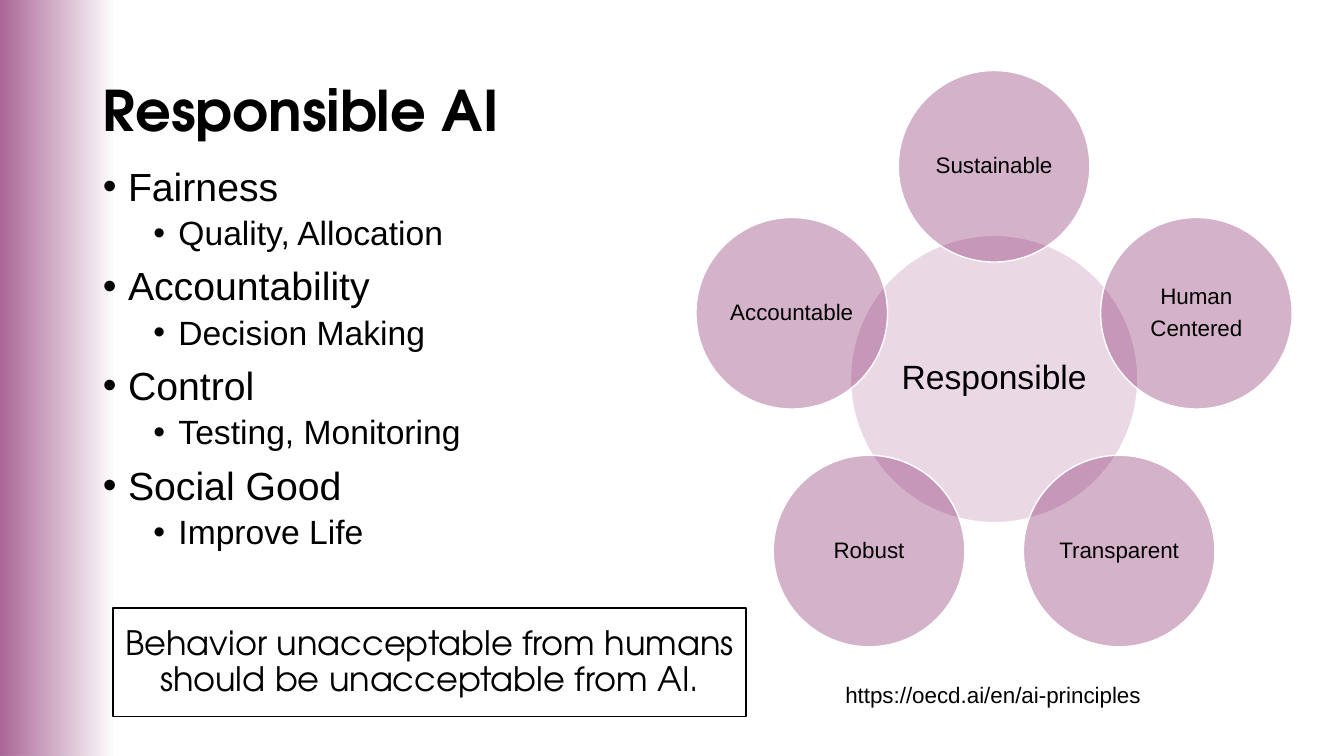
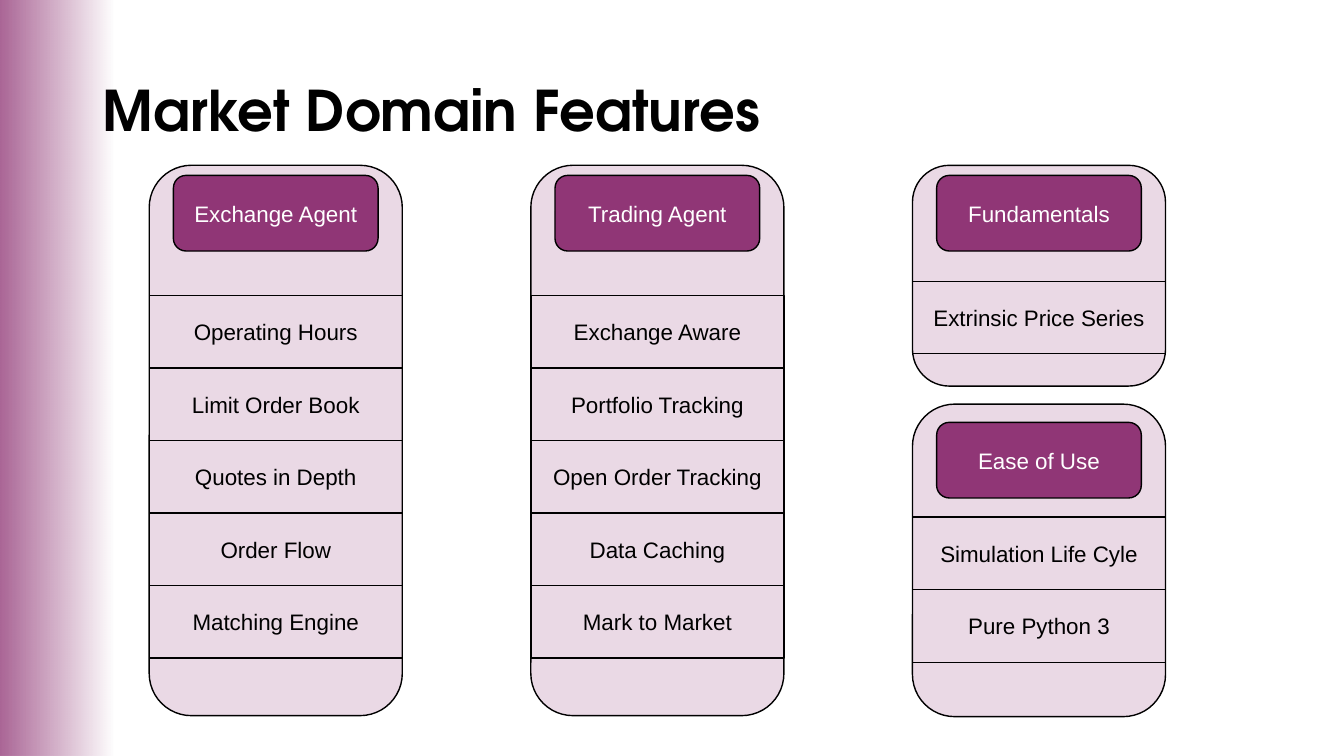
from math import cos, radians, sin

from lxml.etree import SubElement
from pptx import Presentation
from pptx.dml.color import RGBColor
from pptx.enum.shapes import MSO_SHAPE
from pptx.enum.text import MSO_ANCHOR, MSO_AUTO_SIZE, PP_ALIGN
from pptx.oxml.ns import qn
from pptx.util import Inches, Pt

PLUM = RGBColor(0x73, 0x00, 0x51)
BLACK = RGBColor(0x00, 0x00, 0x00)
WHITE = RGBColor(0xFF, 0xFF, 0xFF)
DISPLAY_FONT = "TeX Gyre Adventor"
TEXT_FONT = "Arial"
LINE_SPACING = 0.9
SLIDE_WIDTH, SLIDE_HEIGHT = 13.33, 7.5
BAND_WIDTH = 1.12
TITLE_BOX = (0.92, 0.4, 11.5, 1.45)

PRINCIPLES = [
    ("Fairness", "Quality, Allocation"),
    ("Accountability", "Decision Making"),
    ("Control", "Testing, Monitoring"),
    ("Social Good", "Improve Life"),
]
PETALS = [["Sustainable"], ["Human", "Centered"], ["Transparent"], ["Robust"], ["Accountable"]]

PANEL_WIDTH = 2.51
HEADER_WIDTH, HEADER_HEIGHT = 2.03, 0.75
ROW_HEIGHT = 0.72
PANEL_LEFT, PANEL_PITCH = 1.48, 3.785
# Column, top, height, header offset, rows offset, header, rows
PANELS = [
    (0, 1.64, 5.46, 0.1, 1.29, "Exchange Agent",
     ["Operating Hours", "Limit Order Book", "Quotes in Depth", "Order Flow", "Matching Engine"]),
    (1, 1.64, 5.46, 0.1, 1.29, "Trading Agent",
     ["Exchange Aware", "Portfolio Tracking", "Open Order Tracking", "Data Caching",
      "Mark to Market"]),
    (2, 1.64, 2.19, 0.1, 1.15, "Fundamentals", ["Extrinsic Price Series"]),
    (2, 4.01, 3.1, 0.18, 1.12, "Ease of Use", ["Simulation Life Cyle", "Pure Python 3"]),
]


def place(shape, box):
    """Move a shape to a left, top, width, height box in inches."""
    shape.left, shape.top, shape.width, shape.height = (Inches(value) for value in box)


def add_span(para, text, size, color=BLACK, font=TEXT_FONT, bold=False):
    """Add one formatted run to a paragraph."""
    span = para.add_run()
    span.text = text
    span.font.size = Pt(size)
    span.font.name = font
    span.font.bold = bold
    span.font.color.rgb = color


def next_para(frame, index):
    """Return the first paragraph of a frame, or add a further one."""
    return frame.add_paragraph() if index else frame.paragraphs[0]


def add_figure(page, kind, box, opacity=0, outline=BLACK):
    """Add a preset shape with a see-through plum fill and a thin outline."""
    shape = page.shapes.add_shape(kind, *(Inches(value) for value in box))
    shape.shadow.inherit = False
    if opacity:
        shape.fill.solid()
        shape.fill.fore_color.rgb = PLUM
        color = shape._element.spPr.find(qn("a:solidFill") + "/" + qn("a:srgbClr"))
        SubElement(color, qn("a:alpha"), val=str(opacity * 1000))
    else:
        shape.fill.background()
    shape.line.color.rgb = outline
    shape.line.width = Pt(1)
    return shape


def add_label(shape, text, color=BLACK):
    """Write one centred label in a shape."""
    para = shape.text_frame.paragraphs[0]
    para.alignment = PP_ALIGN.CENTER
    add_span(para, text, 16, color)


def add_band(page):
    """Add the plum band that fades out from the left edge."""
    band = add_figure(page, MSO_SHAPE.RECTANGLE, (0, 0, BAND_WIDTH, SLIDE_HEIGHT))
    band.line.fill.background()
    band.fill.gradient()
    band.fill.gradient_angle = 0
    stops = band._element.spPr.find(qn("a:gradFill") + "/" + qn("a:gsLst"))
    for stop in list(stops):
        stops.remove(stop)
    for step in range(5):
        stop = SubElement(stops, qn("a:gs"), pos=str(step * 25000))
        color = SubElement(stop, qn("a:srgbClr"), val=str(PLUM))
        SubElement(color, qn("a:alpha"), val=str(60000 - step * 15000))


def add_page(deck, layout, title):
    """Add a slide with the shared title style and band."""
    page = deck.slides.add_slide(deck.slide_layouts.get_by_name(layout))
    place(page.shapes.title, TITLE_BOX)
    frame = page.shapes.title.text_frame
    frame.auto_size = MSO_AUTO_SIZE.NONE
    frame.vertical_anchor = MSO_ANCHOR.MIDDLE
    para = frame.paragraphs[0]
    para.alignment = PP_ALIGN.LEFT
    para.line_spacing = LINE_SPACING
    add_span(para, title, 40, font=DISPLAY_FONT, bold=True)
    add_band(page)
    return page


def fill_list(body, box, groups):
    """Fill the body placeholder with a two-level bulleted list."""
    place(body, box)
    frame = body.text_frame
    frame.auto_size = MSO_AUTO_SIZE.NONE
    entries = [(level, text) for group in groups for level, text in enumerate(group)]
    for index, (level, text) in enumerate(entries):
        para = next_para(frame, index)
        para.level = level
        para.line_spacing = LINE_SPACING
        para.space_before = Pt((10, 5)[level] if index else 0)
        properties = para._p.get_or_add_pPr()
        properties.set("marL", str(Inches((0.25, 0.75)[level])))
        properties.set("indent", str(Inches(-0.25)))
        SubElement(properties, qn("a:buFont"), typeface=TEXT_FONT)
        SubElement(properties, qn("a:buChar"), char="•")
        add_span(para, text, (28, 24)[level])


def add_circle(page, center_x, center_y, diameter, lines, size, opacity):
    """Add a labelled circle around a centre point."""
    box = (center_x - diameter / 2, center_y - diameter / 2, diameter, diameter)
    circle = add_figure(page, MSO_SHAPE.OVAL, box, opacity, WHITE)
    frame = circle.text_frame
    frame.margin_left = frame.margin_right = Inches(0.02)
    frame.margin_top = frame.margin_bottom = Inches(0.02)
    for index, line in enumerate(lines):
        para = next_para(frame, index)
        para.alignment = PP_ALIGN.CENTER
        para.line_spacing = LINE_SPACING
        para.space_after = Pt(size * 0.35)
        add_span(para, line, size)


def add_flower(page, center_x, center_y):
    """Add the hub circle and its ring of evenly turned petals."""
    add_circle(page, center_x, center_y, 2.85, ["Responsible"], 24, 15)
    orbit = 2.11
    for index, lines in enumerate(PETALS):
        angle = radians(index * 360 / len(PETALS))
        add_circle(page, center_x + orbit * sin(angle), center_y - orbit * cos(angle),
                   1.9, lines, 16, 30)


def add_statement(page, box, text):
    """Add the framed key statement."""
    statement = add_figure(page, MSO_SHAPE.RECTANGLE, box)
    para = statement.text_frame.paragraphs[0]
    para.alignment = PP_ALIGN.CENTER
    para.line_spacing = LINE_SPACING
    add_span(para, text, 24, font=DISPLAY_FONT)


def add_link(page, box, text):
    """Add the centred source address."""
    link = page.shapes.add_textbox(*(Inches(value) for value in box))
    link.text_frame.word_wrap = True
    add_label(link, text)


def add_panel(page, left, top, height, header_offset, rows_offset, header, rows):
    """Add a rounded panel with a header and stacked rows."""
    add_figure(page, MSO_SHAPE.ROUNDED_RECTANGLE, (left, top, PANEL_WIDTH, height), 15)
    header_left = left + (PANEL_WIDTH - HEADER_WIDTH) / 2
    header_box = (header_left, top + header_offset, HEADER_WIDTH, HEADER_HEIGHT)
    add_label(add_figure(page, MSO_SHAPE.ROUNDED_RECTANGLE, header_box, 75), header, WHITE)
    for index, row in enumerate(rows):
        row_box = (left, top + rows_offset + index * ROW_HEIGHT, PANEL_WIDTH, ROW_HEIGHT)
        add_label(add_figure(page, MSO_SHAPE.RECTANGLE, row_box), row)


def build_principles(deck):
    """Build the slide on responsible AI."""
    page = add_page(deck, "Title and Content", "Responsible AI")
    fill_list(page.placeholders[1], (0.92, 1.61, 5.67, 4.76), PRINCIPLES)
    add_link(page, (6.71, 6.71, 6.28, 0.37), "https://oecd.ai/en/ai-principles")
    add_flower(page, 9.86, 3.76)
    add_statement(page, (1.12, 6.03, 6.28, 1.08),
                  "Behavior unacceptable from humans should be unacceptable from AI.")


def build_features(deck):
    """Build the slide on market domain features."""
    page = add_page(deck, "Title Only", "Market Domain Features")
    for column, *details in PANELS:
        add_panel(page, PANEL_LEFT + column * PANEL_PITCH, *details)


def main():
    """Build and save the deck."""
    deck = Presentation()
    deck.slide_width = Inches(SLIDE_WIDTH)
    deck.slide_height = Inches(SLIDE_HEIGHT)
    build_principles(deck)
    build_features(deck)
    deck.save("out.pptx")


if __name__ == "__main__":
    main()
